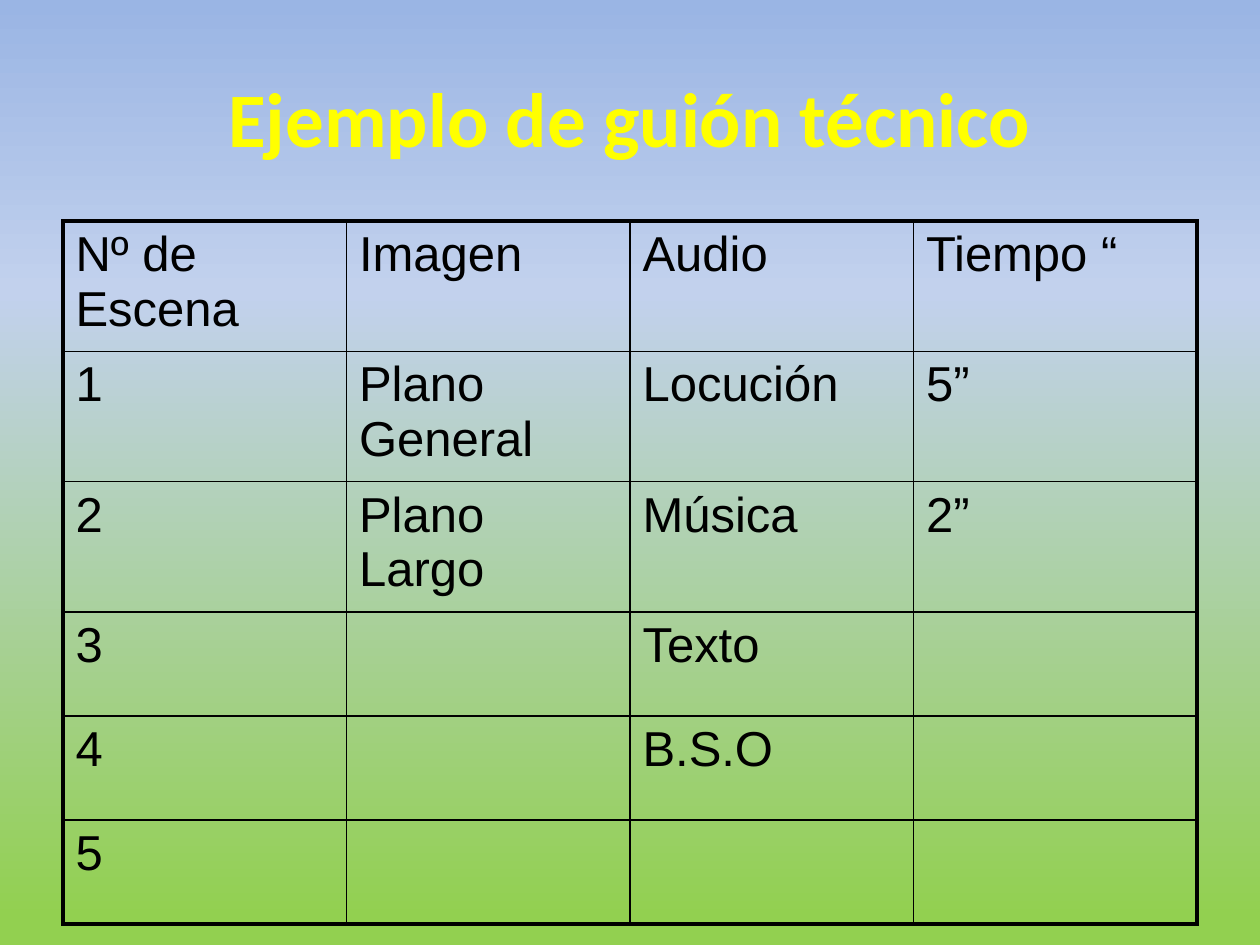
from copy import deepcopy
from lxml.etree import SubElement as Sub
from pptx import Presentation
from pptx.dml.color import RGBColor
from pptx.enum.text import MSO_ANCHOR as Anchor, PP_ALIGN as Align
from pptx.oxml.ns import qn
from pptx.util import Emu, Pt

BLACK = "000000"
ROWS = [
    ["Nº de Escena", "Imagen", "Audio", "Tiempo “"],
    ["1", "Plano General", "Locución", "5”"],
    ["2", "Plano Largo", "Música", "2”"],
    ["3", "", "Texto", ""],
    ["4", "", "B.S.O", ""],
    ["5", "", "", ""],
]
ROW_HEIGHTS = [130, 130, 130, 104, 104, 104]


def px(n):
    return Emu(round(n * 914400 / 126))


def color(hex_code):
    return RGBColor.from_string(hex_code)


def style(font, hex_code, **values):
    for name, value in values.items():
        setattr(font, name, value)
    font.color.rgb = color(hex_code)


def add_background(s, stops):
    fill = s.background.fill
    fill.gradient()
    fill.gradient_angle = 270
    gs_list = next(s.element.iter(qn("a:gsLst")))
    gs_list.append(deepcopy(gs_list[-1]))
    for stop, (position, hex_code) in zip(fill.gradient_stops, stops):
        stop.position = position
        stop.color.rgb = color(hex_code)


def add_title(s, text, x, y, w, h):
    tf = s.shapes.add_textbox(px(x), px(y), px(w), px(h)).text_frame
    tf.word_wrap = True
    tf.vertical_anchor = Anchor.MIDDLE
    p = tf.paragraphs[0]
    p.alignment = Align.CENTER
    r = p.add_run()
    r.text = text
    style(r.font, "FFFF00", name="Calibri", size=Pt(44), bold=True)


def set_borders(cell, widths):
    tc_pr = cell._tc.get_or_add_tcPr()
    # Border lines come before the fill in the cell properties
    for i, (side, width) in enumerate(widths.items()):
        ln = Sub(tc_pr, qn(f"a:ln{side}"), w=str(Pt(width)))
        Sub(Sub(ln, qn("a:solidFill")), qn("a:srgbClr"), val=BLACK)
        tc_pr.insert(i, ln)


def add_script_table(s, rows, heights, x, y, w):
    last_row, last_col = len(rows) - 1, len(rows[0]) - 1
    frame = s.shapes.add_table(len(rows), len(rows[0]), px(x), px(y),
                               px(w), px(sum(heights)))
    table = frame.table
    table.first_row = table.horz_banding = False
    for col in table.columns:
        col.width = px(w / len(rows[0]))
    for i, (texts, height) in enumerate(zip(rows, heights)):
        table.rows[i].height = px(height)
        for j, text in enumerate(texts):
            cell = table.cell(i, j)
            cell.fill.background()
            # Thick outer frame, thin inner grid
            outer = {"L": j == 0, "R": j == last_col,
                     "T": i == 0, "B": i == last_row}
            set_borders(cell, {k: 2.25 if v else 1 for k, v in outer.items()})
            p = cell.text_frame.paragraphs[0]
            if text:
                p.add_run().text = text
            for r in p.runs:
                style(r.font, BLACK, name="Arial", size=Pt(28))


def main():
    prs = Presentation()
    prs.slide_width, prs.slide_height = px(1260), px(945)
    s = prs.slides.add_slide(prs.slide_layouts[6])
    add_background(s, [(0, "9AB5E4"), (0.31, "C2D1ED"), (0.97, "92D050")])
    add_title(s, "Ejemplo de guión técnico", 63, 38, 1134, 157)
    add_script_table(s, ROWS, ROW_HEIGHTS, 63, 221, 1134)
    prs.save("out.pptx")


if __name__ == "__main__":
    main()
